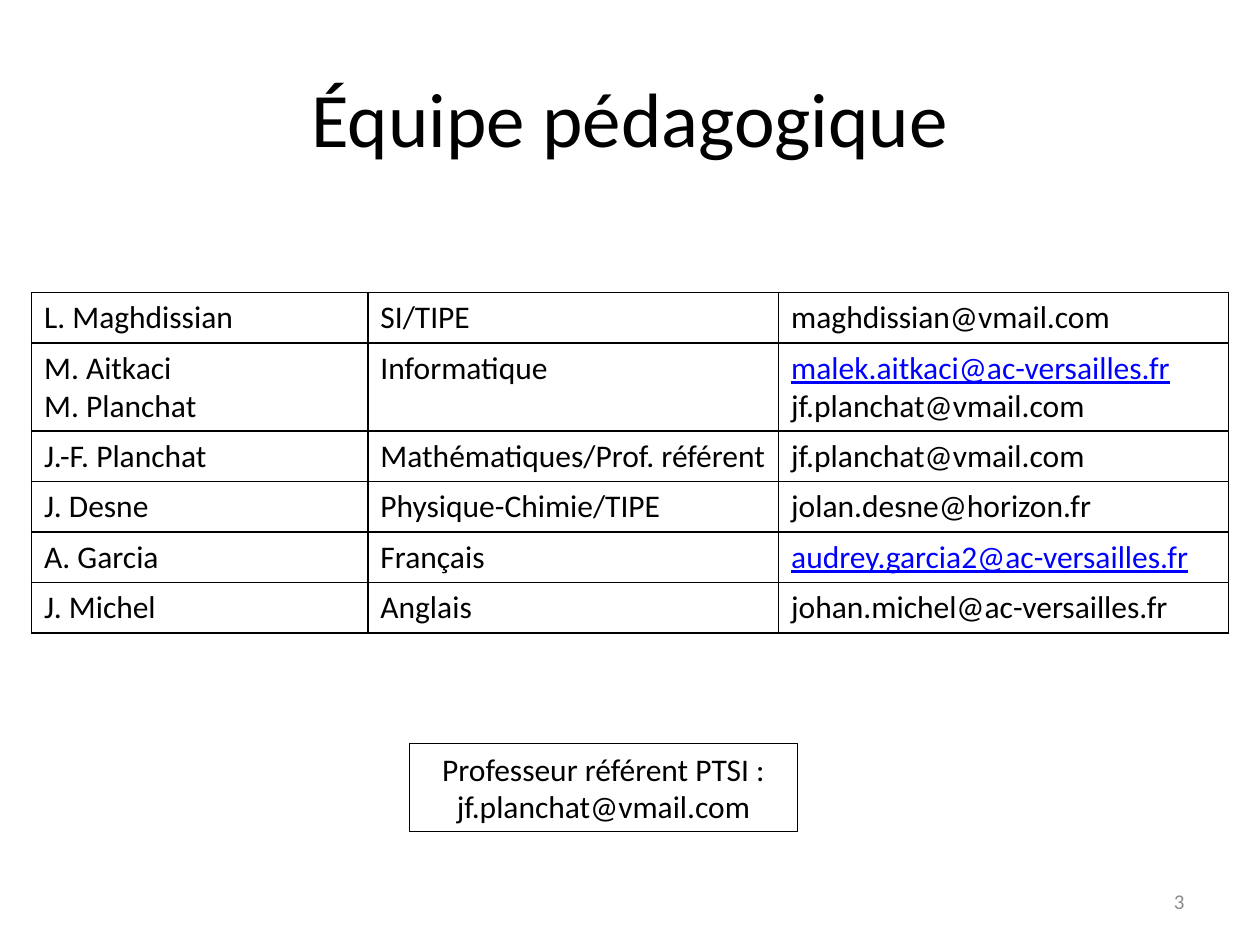
from dataclasses import dataclass

from lxml import etree
from pptx import Presentation, util as u
from pptx.dml.color import RGBColor
from pptx.enum import shapes, text
from pptx.oxml.ns import qn

# Content
TITLE = "Équipe pédagogique"
STAFF = [
    (["L. Maghdissian"], "SI/TIPE", ["maghdissian@vmail.com"]),
    (["M. Aitkaci", "M. Planchat"], "Informatique",
     ["malek.aitkaci@ac-versailles.fr", "jf.planchat@vmail.com"]),
    (["J.-F. Planchat"], "Mathématiques/Prof. référent", ["jf.planchat@vmail.com"]),
    (["J. Desne"], "Physique-Chimie/TIPE", ["jolan.desne@horizon.fr"]),
    (["A. Garcia"], "Français", ["audrey.garcia2@ac-versailles.fr"]),
    (["J. Michel"], "Anglais", ["johan.michel@ac-versailles.fr"]),
]
LINKED = {"malek.aitkaci@ac-versailles.fr", "audrey.garcia2@ac-versailles.fr"}
CONTACT = ["Professeur référent PTSI :", "jf.planchat@vmail.com"]
PAGE = "3"

# Layout in inches
WIDTHS = [2.67, 3.26, 3.57]
ROW, EXTRA = 0.37, 0.23  # one-line row, each further line


@dataclass
class Theme:
    font: str = "Calibri"
    ink: str = "000000"
    link: str = "0000FF"
    gray: str = "8B8B8B"
    head: int = 44
    body: int = 18
    foot: int = 12
    rule: float = 0.96


T = Theme()
ALIGN = text.PP_ALIGN
MID = text.MSO_ANCHOR.MIDDLE


def write(frame, lines, size=T.body, color=T.ink, align=ALIGN.LEFT, anchor=None):
    frame.word_wrap = True
    if anchor is not None:
        frame.vertical_anchor = anchor
    for i, line in enumerate(lines):
        para = frame.paragraphs[0] if i == 0 else frame.add_paragraph()
        para.alignment = align
        run = para.add_run()
        run.text = line
        font = run.font
        font.name, font.size = T.font, u.Pt(size)
        linked = line in LINKED
        font.underline = linked
        font.color.rgb = RGBColor.from_string(T.link if linked else color)


def border(cell):
    props = cell._tc.get_or_add_tcPr()
    for i, side in enumerate(("lnL", "lnR", "lnT", "lnB")):
        line = etree.Element(qn("a:" + side), w=str(u.Pt(T.rule)))
        fill = etree.SubElement(line, qn("a:solidFill"))
        etree.SubElement(fill, qn("a:srgbClr"), val=T.ink)
        props.insert(i, line)


def box(slide, *place):
    return slide.shapes.add_textbox(*map(u.Inches, place))


def roster(slide):
    highs = [ROW + EXTRA * (len(names) - 1) for names, _, _ in STAFF]
    place = map(u.Inches, (0.25, 2.32, sum(WIDTHS), sum(highs)))
    table = slide.shapes.add_table(len(STAFF), len(WIDTHS), *place).table
    table.first_row = table.horz_banding = False
    for col, wide in zip(table.columns, WIDTHS):
        col.width = u.Inches(wide)
    for r, (names, topic, mails) in enumerate(STAFF):
        table.rows[r].height = u.Inches(highs[r])
        for c, lines in enumerate((names, [topic], mails)):
            cell = table.cell(r, c)
            cell.fill.background()
            border(cell)
            write(cell.text_frame, lines)


def main():
    deck = Presentation()
    deck.slide_width, deck.slide_height = u.Inches(10), u.Inches(7.5)
    slide = deck.slides.add_slide(deck.slide_layouts[6])

    # Title
    write(box(slide, 0.5, 0.3, 9, 1.25).text_frame, [TITLE],
          size=T.head, align=ALIGN.CENTER, anchor=MID)

    # Staff table
    roster(slide)

    # Contact frame
    frame = slide.shapes.add_shape(shapes.MSO_SHAPE.RECTANGLE,
                                   *map(u.Inches, (3.25, 5.9, 3.08, 0.7)))
    frame.shadow.inherit = False
    frame.fill.background()
    frame.line.color.rgb = RGBColor.from_string(T.ink)
    frame.line.width = u.Pt(0)
    write(frame.text_frame, CONTACT, align=ALIGN.CENTER, anchor=text.MSO_ANCHOR.TOP)
    frame.text_frame.auto_size = text.MSO_AUTO_SIZE.SHAPE_TO_FIT_TEXT

    # Page number
    write(box(slide, 7.17, 6.95, 2.33, 0.4).text_frame, [PAGE],
          size=T.foot, color=T.gray, align=ALIGN.RIGHT, anchor=MID)

    deck.save("out.pptx")


if __name__ == "__main__":
    main()
